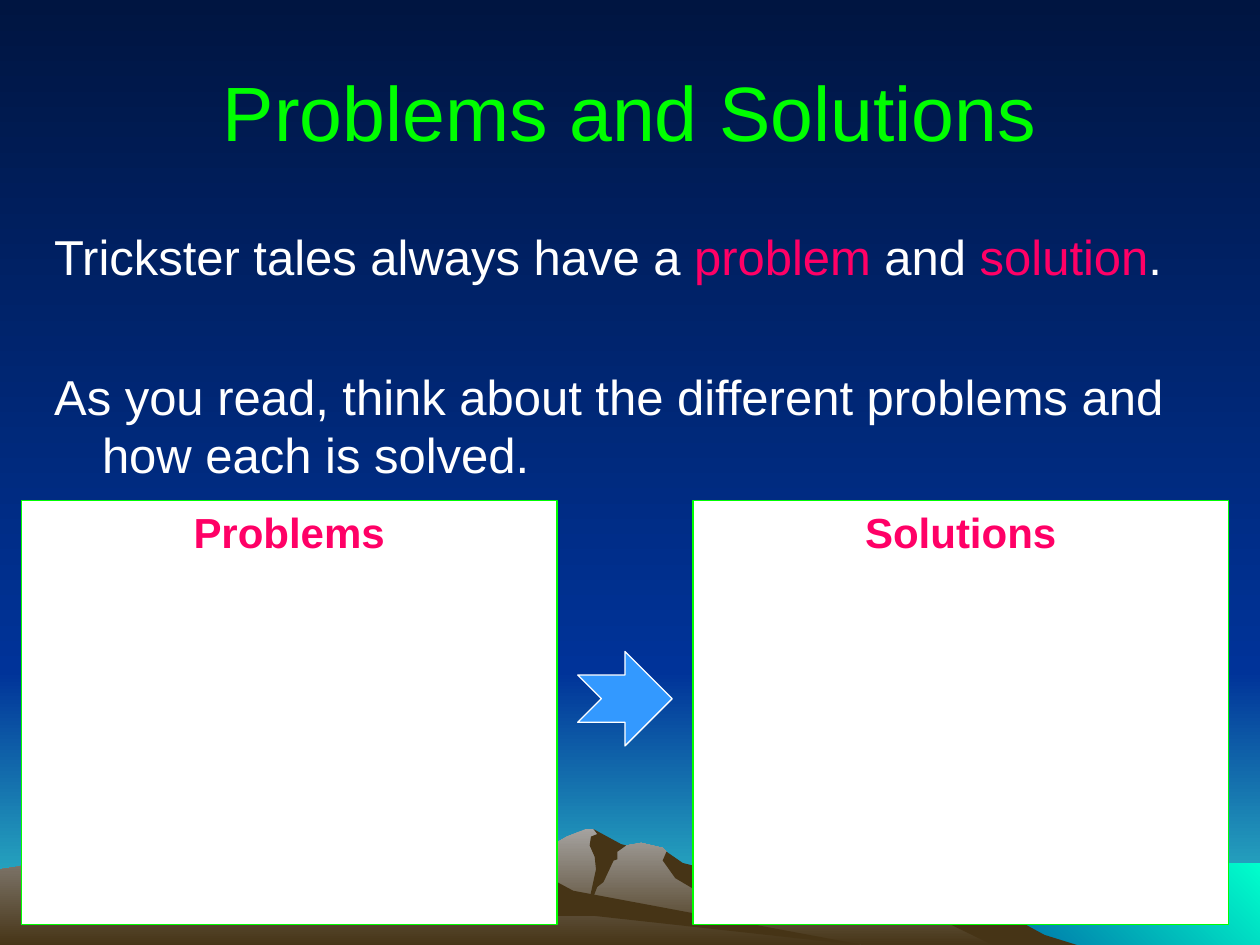
from dataclasses import dataclass
from typing import NamedTuple

from lxml import etree
from pptx import Presentation
from pptx import util as u
from pptx.dml.color import RGBColor
from pptx.enum import shapes, text
from pptx.oxml.ns import qn


@dataclass(frozen=True)
class Theme:
    font: str = "Arial"
    title_size: int = 44
    body_size: int = 28
    panel_size: int = 24
    title: str = "00FF00"
    body: str = "FFFFFF"
    accent: str = "FF0066"
    panel: str = "FFFFFF"
    arrow: str = "3399FF"
    night: str = "001541"
    sky: str = "003399"
    dawn: str = "33CCCC"
    sea: str = "00FFCC"
    rock: str = "463416"
    far_rock: str = "A5A29F"
    near_rock: str = "938F8B"


class Box(NamedTuple):
    """Left, top, width and height in inches."""
    left: float
    top: float
    width: float
    height: float

    def emu(self) -> list:
        return [u.Inches(side) for side in self]


class Scenery(NamedTuple):
    """An outline in hundredths of an inch, with one colour or two blended ones."""
    colours: tuple
    outline: list
    angle: int = 270


class Panel(NamedTuple):
    heading: str
    column: int


THEME = Theme()
WIDTH, HEIGHT = 10, 7.5
RIGHT, BOTTOM, HORIZON = 1000, 750, 533
PANEL_LEFT, PANEL_TOP, PANEL_STEP = 0.17, 3.97, 5.33
PANEL_WIDTH, PANEL_HEIGHT = 4.25, 3.37
ARROW_SIZE = 0.75
PANELS = [Panel("Problems", 0), Panel("Solutions", 1)]
SENTENCES = [
    [("Trickster tales always have a ", THEME.body), ("problem", THEME.accent),
     (" and ", THEME.body), ("solution", THEME.accent), (".", THEME.body)],
    [("As you read, think about the different problems and how each is solved.",
      THEME.body)],
]


def band(left: int, top: int, bottom: int) -> list:
    """Outline of a strip that reaches the right edge of the slide."""
    return [(left, top), (RIGHT, top), (RIGHT, bottom), (left, bottom)]


LANDSCAPE = [
    Scenery((THEME.sky, THEME.dawn), band(0, HORIZON, BOTTOM)),
    Scenery((THEME.night, THEME.sky), band(0, 0, HORIZON)),
    Scenery((THEME.sky, THEME.sea), band(683, 685, BOTTOM), 45),
    # Far range, then its shaded slopes
    Scenery((THEME.far_rock, THEME.rock), [
        (802, 740), (778, 727), (764, 723), (723, 698), (702, 671), (685, 660),
        (676, 666), (656, 671), (629, 671), (613, 681), (566, 697), (536, 690),
        (529, 676), (526, 673), (509, 669), (486, 673), (474, 661), (471, 658),
        (465, 658), (450, 664), (438, 671), (424, 672), (405, 681), (394, 685),
        (355, 698), (327, 709), (277, 739), (258, 751), (821, 751)]),
    Scenery((THEME.rock,), [
        (796, 724), (771, 724), (734, 703), (707, 671), (685, 660), (689, 664),
        (685, 671), (691, 680), (698, 702), (693, 733), (720, 717), (792, 752),
        (858, 751), (829, 742)]),
    Scenery((THEME.rock,), [
        (471, 658), (474, 662), (469, 664), (468, 671), (472, 680), (473, 690),
        (465, 727), (474, 704), (479, 700), (487, 683), (490, 682), (490, 676),
        (497, 671), (493, 670)]),
    Scenery((THEME.rock,), [
        (529, 676), (526, 683), (536, 697), (580, 723), (576, 700), (592, 689),
        (570, 692), (542, 685)]),
    # Near range and its shaded slope
    Scenery((THEME.near_rock, THEME.rock), [
        (690, 751), (667, 748), (432, 712), (354, 665), (331, 663), (327, 668),
        (318, 664), (296, 676), (271, 682), (260, 676), (236, 681), (223, 663),
        (208, 658), (196, 658), (183, 664), (160, 671), (148, 667), (132, 671),
        (111, 669), (94, 671), (68, 662), (56, 669), (46, 674), (26, 685),
        (14, 688), (0, 690), (0, 751)]),
    Scenery((THEME.rock,), [
        (370, 668), (354, 665), (344, 665), (339, 669), (337, 687), (348, 683),
        (363, 691), (374, 712), (407, 727), (472, 727), (690, 751), (455, 707),
        (427, 692), (401, 681)]),
]


def paint(fill, colours: tuple, angle: int = 270) -> None:
    if len(colours) == 1:
        fill.solid()
        fill.fore_color.rgb = RGBColor.from_string(colours[0])
        return
    fill.gradient()
    fill.gradient_angle = angle
    for stop, colour in zip(fill.gradient_stops, colours):
        stop.color.rgb = RGBColor.from_string(colour)


def style(run, size: int, colour: str, bold: bool = False) -> None:
    run.font.name = THEME.font
    run.font.size = u.Pt(size)
    run.font.bold = bold
    run.font.color.rgb = RGBColor.from_string(colour)


def draw_scenery(slide, part: Scenery) -> None:
    start, *rest = part.outline
    pen = slide.shapes.build_freeform(*start, scale=u.Inches(0.01))
    pen.add_line_segments(rest, close=True)
    shape = pen.convert_to_shape()
    shape.shadow.inherit = False
    shape.line.fill.background()
    paint(shape.fill, part.colours, part.angle)


def draw_shape(slide, kind, box: Box, fill: str, line: str):
    shape = slide.shapes.add_shape(kind, *box.emu())
    shape.shadow.inherit = False
    paint(shape.fill, (fill,))
    shape.line.color.rgb = RGBColor.from_string(line)
    shape.line.width = u.Pt(0.75)
    return shape


def draw_panel(slide, panel: Panel) -> None:
    box = Box(PANEL_LEFT + panel.column * PANEL_STEP, PANEL_TOP, PANEL_WIDTH, PANEL_HEIGHT)
    frame = draw_shape(slide, shapes.MSO_SHAPE.RECTANGLE, box, THEME.panel,
                       THEME.title).text_frame
    frame.text = panel.heading
    frame.vertical_anchor = text.MSO_ANCHOR.TOP
    frame.paragraphs[0].alignment = text.PP_ALIGN.CENTER
    style(frame.paragraphs[0].runs[0], THEME.panel_size, THEME.accent, bold=True)


def place(slide, holder, box: Box):
    """Move a placeholder in front of the scenery and return its text frame."""
    holder.left, holder.top, holder.width, holder.height = box.emu()
    slide.shapes._spTree.append(holder._element)
    holder.text_frame.auto_size = text.MSO_AUTO_SIZE.NONE
    return holder.text_frame


def write_title(slide) -> None:
    frame = place(slide, slide.shapes.title, Box(0.5, 0.25, 9, 1.25))
    frame.text = "Problems and Solutions"
    frame.vertical_anchor = text.MSO_ANCHOR.MIDDLE
    frame.paragraphs[0].alignment = text.PP_ALIGN.CENTER
    style(frame.paragraphs[0].runs[0], THEME.title_size, THEME.title)


def write_body(slide) -> None:
    frame = place(slide, slide.placeholders[1], Box(0.33, 1.75, 9.75, 4.92))
    for index, sentence in enumerate(SENTENCES):
        paragraph = frame.add_paragraph() if index else frame.paragraphs[0]
        paragraph.space_before = u.Pt(46 if index else 5.6)
        properties = paragraph._p.get_or_add_pPr()
        properties.set("marL", str(u.Inches(0.38)))
        properties.set("indent", str(u.Inches(-0.38)))
        etree.SubElement(properties, qn("a:buNone"))
        for words, colour in sentence:
            run = paragraph.add_run()
            run.text = words
            style(run, THEME.body_size, colour)


def main() -> None:
    deck = Presentation()
    deck.slide_width, deck.slide_height = u.Inches(WIDTH), u.Inches(HEIGHT)
    slide = deck.slides.add_slide(deck.slide_layouts[1])
    paint(slide.background.fill, (THEME.night, THEME.sky))
    for part in LANDSCAPE:
        draw_scenery(slide, part)
    write_title(slide)
    write_body(slide)
    for panel in PANELS:
        draw_panel(slide, panel)
    gap_middle = PANEL_LEFT + (PANEL_STEP + PANEL_WIDTH) / 2
    arrow = Box(gap_middle - ARROW_SIZE / 2, 5.17, ARROW_SIZE, ARROW_SIZE)
    draw_shape(slide, shapes.MSO_SHAPE.NOTCHED_RIGHT_ARROW, arrow, THEME.arrow, THEME.body)
    deck.save("out.pptx")


if __name__ == "__main__":
    main()
